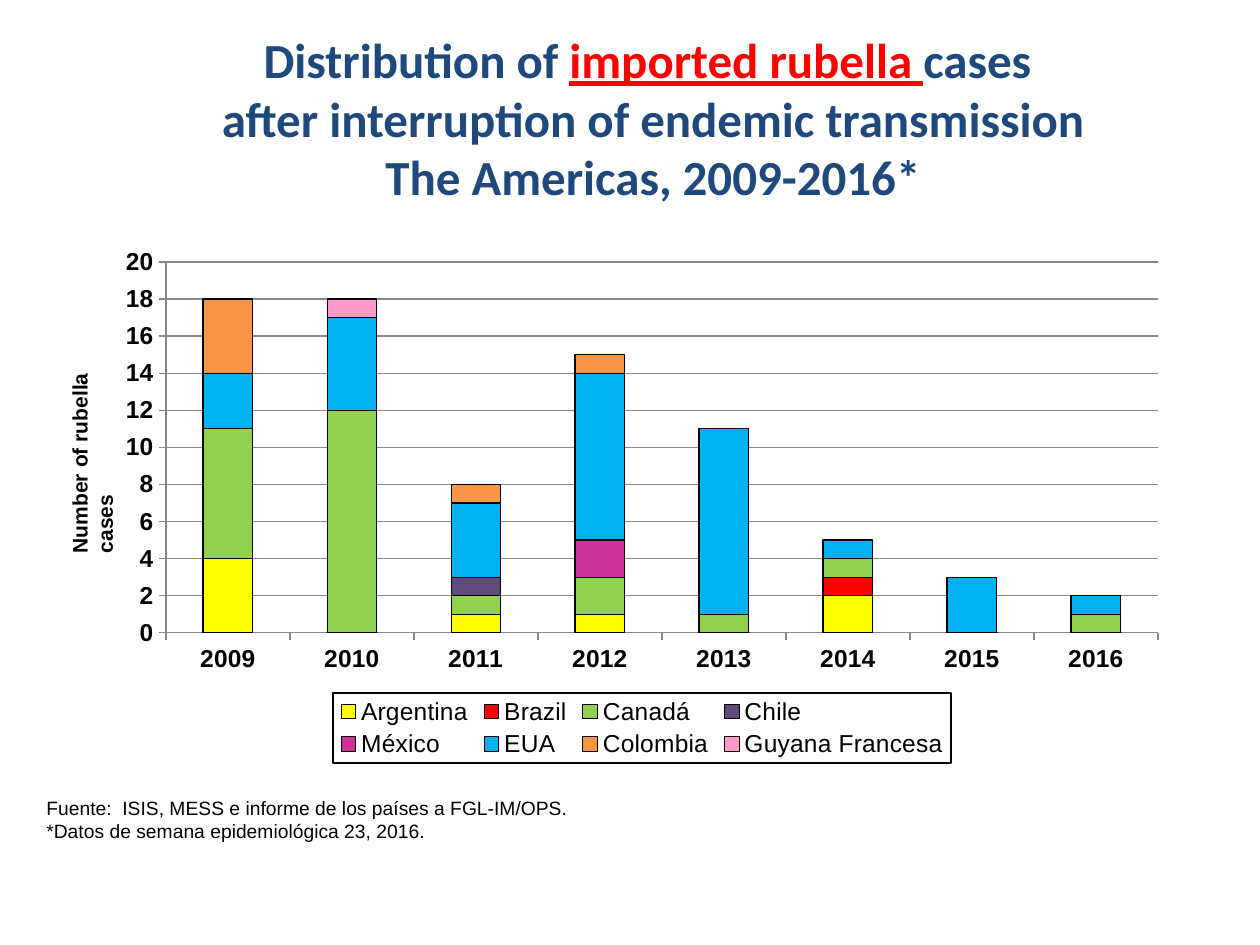
from lxml.etree import SubElement, Element
from pptx import Presentation
from pptx.chart.data import CategoryChartData
from pptx.dml.color import RGBColor
from pptx.enum.chart import XL_CHART_TYPE, XL_LEGEND_POSITION, XL_TICK_MARK
from pptx.enum.text import MSO_ANCHOR, MSO_AUTO_SIZE, PP_ALIGN
from pptx.oxml import parse_xml
from pptx.oxml.ns import nsdecls, qn
from pptx.util import Emu, Inches, Pt

PX_PER_INCH = 126
NAVY, RED, BLACK, GRAY = "1F497D", "FF0000", "000000", "868686"

YEARS = [str(year) for year in range(2009, 2017)]
COUNTRIES = [
    ("Argentina", "FFFF00", (4, 0, 1, 1, 0, 2, 0, 0)),
    ("Brazil", RED, (0, 0, 0, 0, 0, 1, 0, 0)),
    ("Canadá", "92D050", (7, 12, 1, 2, 1, 1, 0, 1)),
    ("Chile", "604A7B", (0, 0, 1, 0, 0, 0, 0, 0)),
    ("México", "CC3399", (0, 0, 0, 2, 0, 0, 0, 0)),
    ("EUA", "00B0F0", (3, 5, 4, 9, 10, 1, 3, 1)),
    ("Colombia", "F79646", (4, 0, 1, 1, 0, 0, 0, 0)),
    ("Guyana Francesa", "FF99CC", (0, 1, 0, 0, 0, 0, 0, 0)),
]


def px(length):
    return Emu(round(length * 914400 / PX_PER_INCH))


def color(hex_string):
    return RGBColor.from_string(hex_string)


def set_font(font, hex_string=BLACK, **values):
    for name, value in values.items():
        setattr(font, name, value)
    font.color.rgb = color(hex_string)


def set_line(line, hex_string):
    line.color.rgb = color(hex_string)
    line.width = Pt(0.75)


def manual_layout(chart_box, box, inner=False):
    """Build a c:layout that puts box at its place inside chart_box."""
    left, top, width, height = chart_box
    layout = Element(qn("c:layout"))
    manual = SubElement(layout, qn("c:manualLayout"))
    values = {"layoutTarget": "inner"} if inner else {}
    values.update(xMode="edge", yMode="edge")
    values.update(x=(box[0] - left) / width, y=(box[1] - top) / height,
                  w=box[2] / width, h=box[3] / height)
    for name, value in values.items():
        text = value if isinstance(value, str) else f"{value:.4f}"
        SubElement(manual, qn(f"c:{name}")).set("val", text)
    return layout


class SlideBuilder:
    def __init__(self, presentation):
        self.slide = presentation.slides.add_slide(presentation.slide_layouts[5])
        self.label_font = {"name": "Arial", "size": Pt(14), "bold": True}

    def place(self, shape, box):
        for name, value in zip(("left", "top", "width", "height"), box):
            setattr(shape, name, px(value))

    def fill_text(self, shape, paragraphs, align, **font):
        """Each paragraph is a list of (text, colour, underline) runs."""
        frame = shape.text_frame
        frame.word_wrap = True
        frame.auto_size = MSO_AUTO_SIZE.NONE
        frame.vertical_anchor = MSO_ANCHOR.TOP
        for index, runs in enumerate(paragraphs):
            paragraph = frame.add_paragraph() if index else frame.paragraphs[0]
            paragraph.alignment = align
            for text, hex_string, underline in runs:
                if text == "\v":
                    paragraph.add_line_break()
                    continue
                run = paragraph.add_run()
                run.text = text
                set_font(run.font, hex_string, underline=underline, **font)

    def title(self, box, paragraphs):
        shape = self.slide.shapes.title
        self.place(shape, box)
        self.fill_text(shape, paragraphs, PP_ALIGN.CENTER,
                       name="Calibri", size=Pt(28), bold=True)

    def text(self, box, lines, size, bold=False, rotation=0):
        shape = self.slide.shapes.add_textbox(*map(px, box))
        shape.rotation = rotation
        self.fill_text(shape, [[(line, BLACK, False)] for line in lines],
                       PP_ALIGN.LEFT, name="Arial", size=Pt(size), bold=bold)

    def stacked_chart(self, box, plot_box, legend_box):
        data = CategoryChartData()
        data.categories = YEARS
        for name, _, values in COUNTRIES:
            data.add_series(name, values)
        chart = self.slide.shapes.add_chart(
            XL_CHART_TYPE.COLUMN_STACKED, *map(px, box), data).chart
        chart.has_title = False
        set_font(chart.font, name="Calibri", size=Pt(18))

        # Columns
        plot = chart.plots[0]
        plot.gap_width, plot.overlap, plot.vary_by_categories = 150, 100, False
        for series, (_, hex_string, _) in zip(plot.series, COUNTRIES):
            series.format.fill.solid()
            series.format.fill.fore_color.rgb = color(hex_string)
            set_line(series.format.line, BLACK)

        # Axes
        for axis in (chart.category_axis, chart.value_axis):
            axis.major_tick_mark = XL_TICK_MARK.OUTSIDE
            axis.minor_tick_mark = XL_TICK_MARK.NONE
            set_line(axis.format.line, GRAY)
            set_font(axis.tick_labels.font, **self.label_font)
        value_axis = chart.value_axis
        scale = {"minimum_scale": 0, "maximum_scale": 20, "major_unit": 2,
                 "has_major_gridlines": True}
        for name, value in scale.items():
            setattr(value_axis, name, value)
        set_line(value_axis.major_gridlines.format.line, GRAY)

        # Legend with a thin frame
        chart.has_legend = True
        legend = chart.legend
        legend.position = XL_LEGEND_POSITION.BOTTOM
        legend.include_in_layout = False
        set_font(legend.font, name="Arial", size=Pt(14), bold=False)
        frame = parse_xml(
            f'<c:spPr {nsdecls("c", "a")}><a:ln w="9525"><a:solidFill>'
            f'<a:srgbClr val="{BLACK}"/></a:solidFill></a:ln></c:spPr>')
        legend_xml = legend._element
        legend_xml.find(qn("c:overlay")).addnext(frame)

        # Fixed places for plot and legend
        plot_area = chart._chartSpace.find(f".//{qn('c:plotArea')}")
        for parent in (plot_area, legend_xml):
            for layout in parent.findall(qn("c:layout")):
                parent.remove(layout)
        plot_area.insert(0, manual_layout(box, plot_box, inner=True))
        legend_xml.find(qn("c:legendPos")).addnext(
            manual_layout(box, legend_box))


def main():
    presentation = Presentation()
    presentation.slide_width, presentation.slide_height = Inches(10), Inches(7.5)
    builder = SlideBuilder(presentation)

    builder.stacked_chart(box=(105, 238, 1075, 526),
                          plot_box=(166, 262, 992, 371),
                          legend_box=(333, 693, 618, 70))
    builder.title((203, 23, 900, 190), [
        [("Distribution of ", NAVY, False), ("imported rubella ", RED, True),
         ("cases ", NAVY, False), ("\v", NAVY, False),
         ("after interruption of endemic transmission", NAVY, False)],
        [("The Americas, 2009-2016*", NAVY, False)],
    ])
    # Value axis label and source note
    builder.text((-40, 427, 239, 38), ["Number of rubella cases"], 12,
                 bold=True, rotation=270)
    builder.text((34, 790, 753, 59), [
        "Fuente:  ISIS, MESS e informe de los países a FGL-IM/OPS.",
        "*Datos de semana epidemiológica 23, 2016."], 11)

    presentation.save("out.pptx")


if __name__ == "__main__":
    main()
